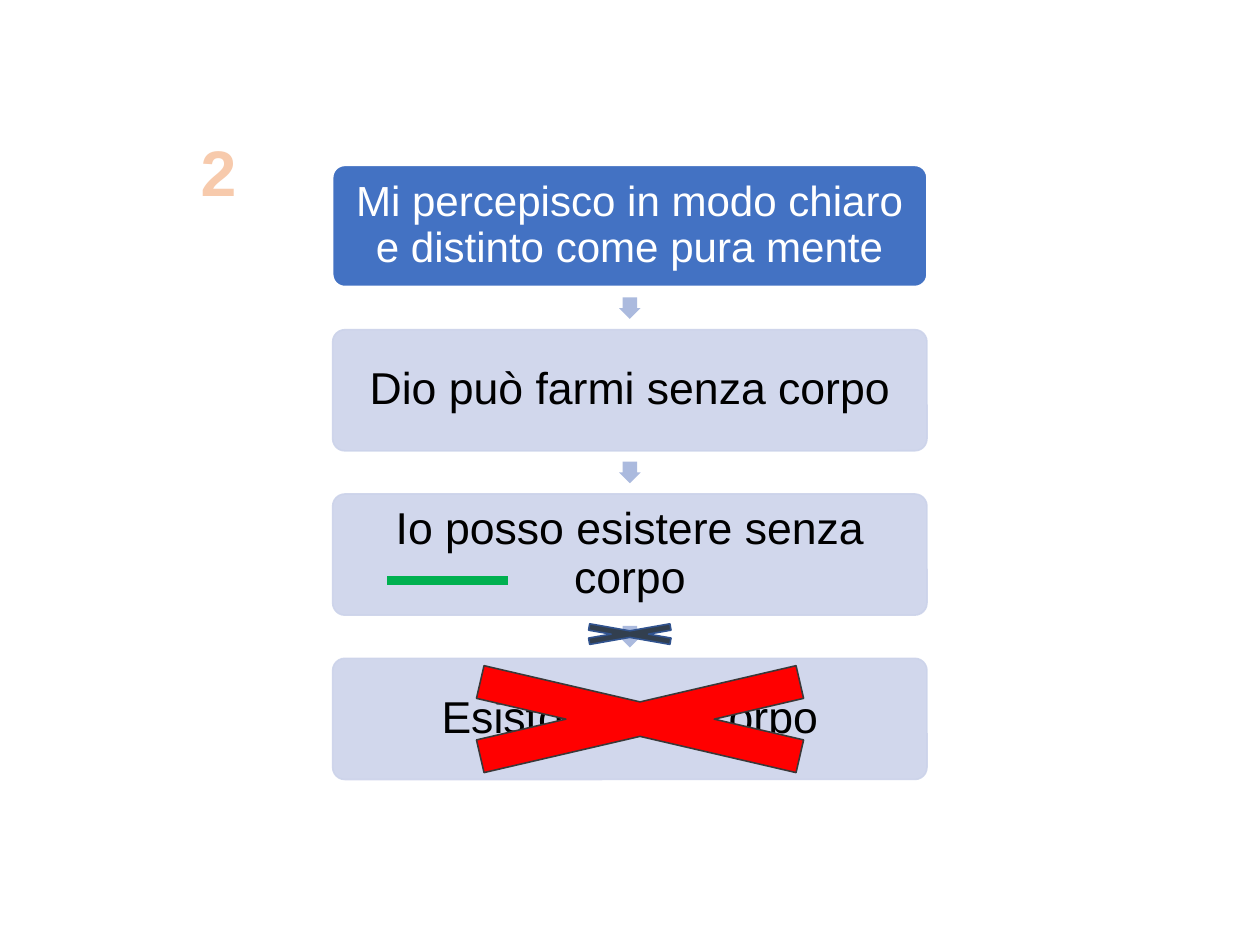
from dataclasses import dataclass

from lxml import etree
from pptx import Presentation
from pptx.dml.color import RGBColor
from pptx.enum.shapes import MSO_CONNECTOR, MSO_SHAPE
from pptx.enum.text import MSO_ANCHOR, MSO_AUTO_SIZE, PP_ALIGN
from pptx.oxml.ns import qn
from pptx.util import Pt

ROUND = MSO_SHAPE.ROUNDED_RECTANGLE
DOWN = MSO_SHAPE.DOWN_ARROW
TIMES = MSO_SHAPE.MATH_MULTIPLY
STRAIGHT = MSO_CONNECTOR.STRAIGHT
MIDDLE, TOP = MSO_ANCHOR.MIDDLE, MSO_ANCHOR.TOP
CENTER = PP_ALIGN.CENTER
FIXED = MSO_AUTO_SIZE.NONE


@dataclass(frozen=True)
class Theme:
    font: str = "Arial"
    white: str = "FFFFFF"
    black: str = "000000"
    blue: str = "4372C3"
    pale: str = "CCD3EA"
    arrow: str = "ABBADE"
    slate: str = "323F4F"
    navy: str = "31538F"
    red: str = "FF0000"
    dark: str = "3A3838"
    green: str = "00B050"
    peach: str = "F7CAAC"
    first: float = 26.5
    step: float = 28.1
    number: float = 40.5


THEME = Theme()
STEPS = [
    "Mi percepisco in modo chiaro e distinto come pura mente",
    "Dio può farmi senza corpo",
    "Io posso esistere senza corpo",
    "Esisto senza corpo",
]
LEFT, FIRST_TOP = 209.6, 104.2
WIDTH, HEIGHT, PITCH = 374.4, 76.3, 103.5
ARROW = 13.6


def paint(color, value, alpha=100):
    """Set a solid colour, with its opacity in percent."""
    color.fore_color.rgb = RGBColor.from_string(value)
    if alpha < 100:
        for node in color._xPr.iter(qn("a:srgbClr")):
            etree.SubElement(node, qn("a:alpha"), val=str(alpha * 1000))


def write(shape, text, size, color, bold=False, anchor=MIDDLE,
          inset=(3, 3), spacing=0.9):
    frame = shape.text_frame
    frame.word_wrap = True
    frame.auto_size = FIXED
    frame.vertical_anchor = anchor
    frame.margin_left = frame.margin_right = Pt(inset[0])
    frame.margin_top = frame.margin_bottom = Pt(inset[1])
    para = frame.paragraphs[0]
    para.alignment = CENTER
    para.line_spacing = spacing
    para.space_before = Pt(0)
    run = para.add_run()
    run.text = text
    run.font.name = THEME.font
    run.font.size = Pt(size)
    run.font.bold = bold
    run.font.color.rgb = RGBColor.from_string(color)


def add_form(slide, kind, box, adjust, fill, line=None, alpha=100):
    shape = slide.shapes.add_shape(kind, *map(Pt, box))
    shape.shadow.inherit = False
    for index, value in enumerate(adjust):
        shape.adjustments[index] = value
    shape.fill.solid()
    paint(shape.fill, fill, alpha)
    if line:
        shape.line.width = Pt(1)
        shape.line.fill.solid()
        paint(shape.line.fill, line, alpha)
    else:
        shape.line.fill.background()
    return shape


def add_steps(slide):
    """Stack the steps, with an arrow centred in each gap."""
    gap = PITCH - HEIGHT
    for index, text in enumerate(STEPS):
        top = FIRST_TOP + index * PITCH
        box = (LEFT, top, WIDTH, HEIGHT)
        if index == 0:
            shape = add_form(slide, ROUND, box, [0.1], THEME.blue, THEME.white)
            write(shape, text, THEME.first, THEME.white)
            continue
        add_form(slide, DOWN,
                 (LEFT + (WIDTH - ARROW) / 2, top - (gap + ARROW) / 2,
                  ARROW, ARROW), [0.667, 0.5], THEME.arrow)
        shape = add_form(slide, ROUND, box, [0.1], THEME.pale, THEME.pale, 90)
        write(shape, text, THEME.step, THEME.black)


def add_cross(slide, box, fill, line):
    add_form(slide, TIMES, box, [0.235], fill, line)


def add_rule(slide, left, right, y, color, width):
    rule = slide.shapes.add_connector(STRAIGHT, Pt(left), Pt(y), Pt(right), Pt(y))
    rule.line.width = Pt(width)
    rule.line.fill.solid()
    paint(rule.line.fill, color)
    etree.SubElement(rule._element.spPr, qn("a:effectLst"))


def set_number(slide, text):
    title = slide.shapes.title
    title.left, title.top = Pt(120.6), Pt(84.6)
    title.width, title.height = Pt(33.8), Pt(51.1)
    write(title, text, THEME.number, THEME.peach, bold=True, anchor=TOP,
          inset=(5.8, 2.9), spacing=0.93)


def main():
    deck = Presentation()
    deck.slide_width, deck.slide_height = Pt(793.75), Pt(595.25)
    slide = deck.slides.add_slide(deck.slide_layouts[5])
    set_number(slide, "2")
    add_steps(slide)
    add_cross(slide, (347.5, 390.8, 98.6, 17.3), THEME.slate, THEME.navy)
    add_cross(slide, (209.5, 408, 387.4, 90), THEME.red, THEME.dark)
    add_rule(slide, 244, 320.2, 365.6, THEME.green, 6)
    deck.save("out.pptx")


if __name__ == "__main__":
    main()
